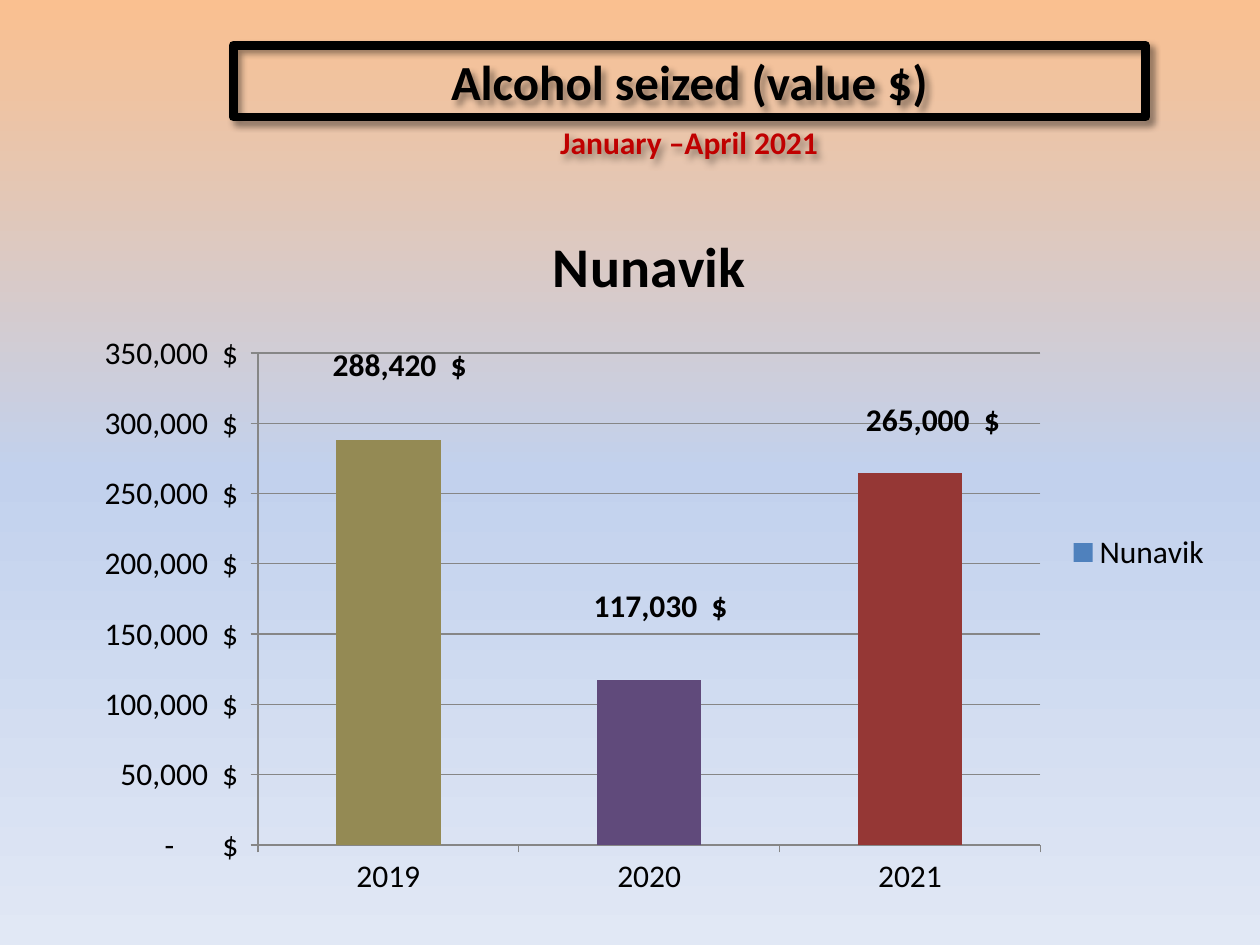
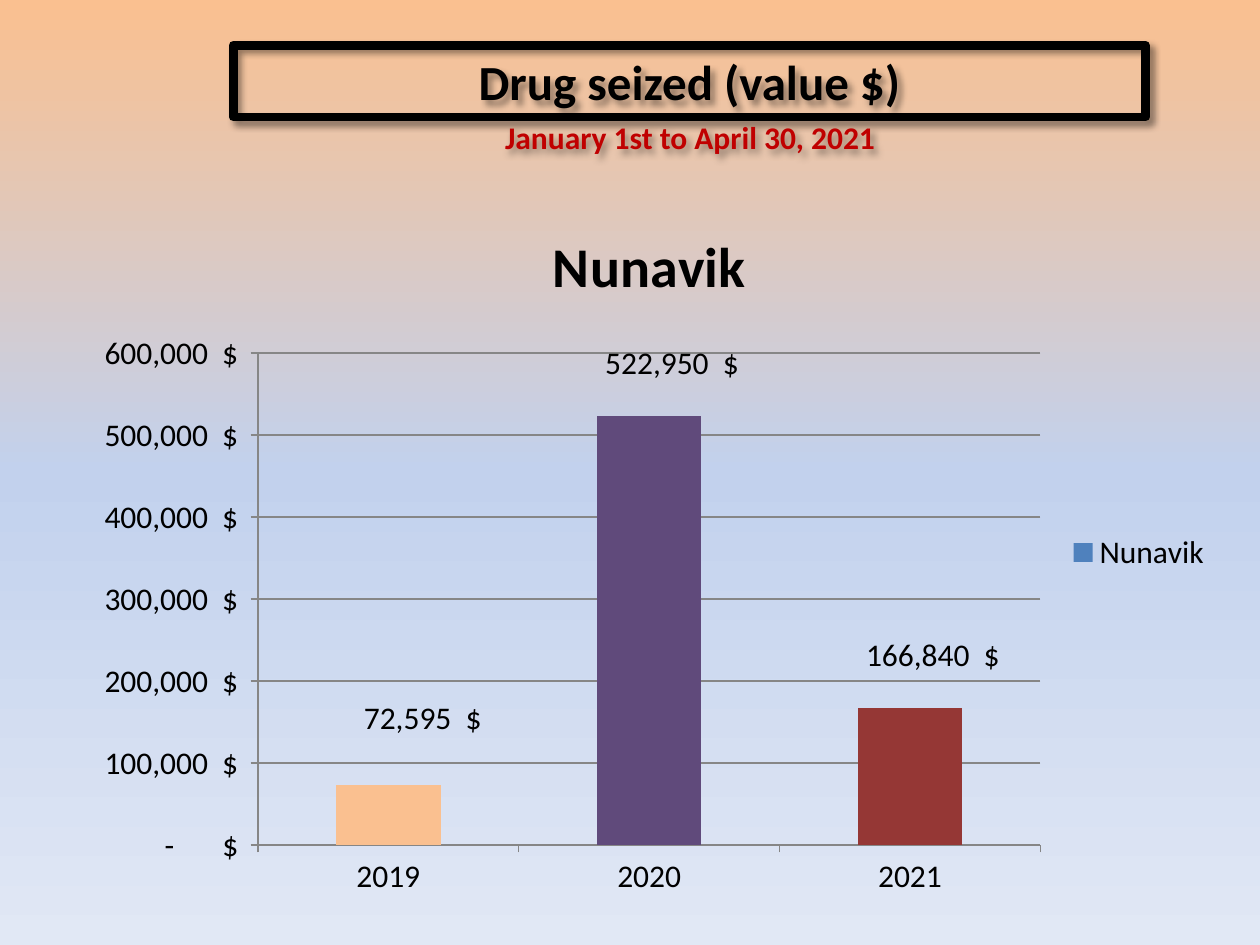
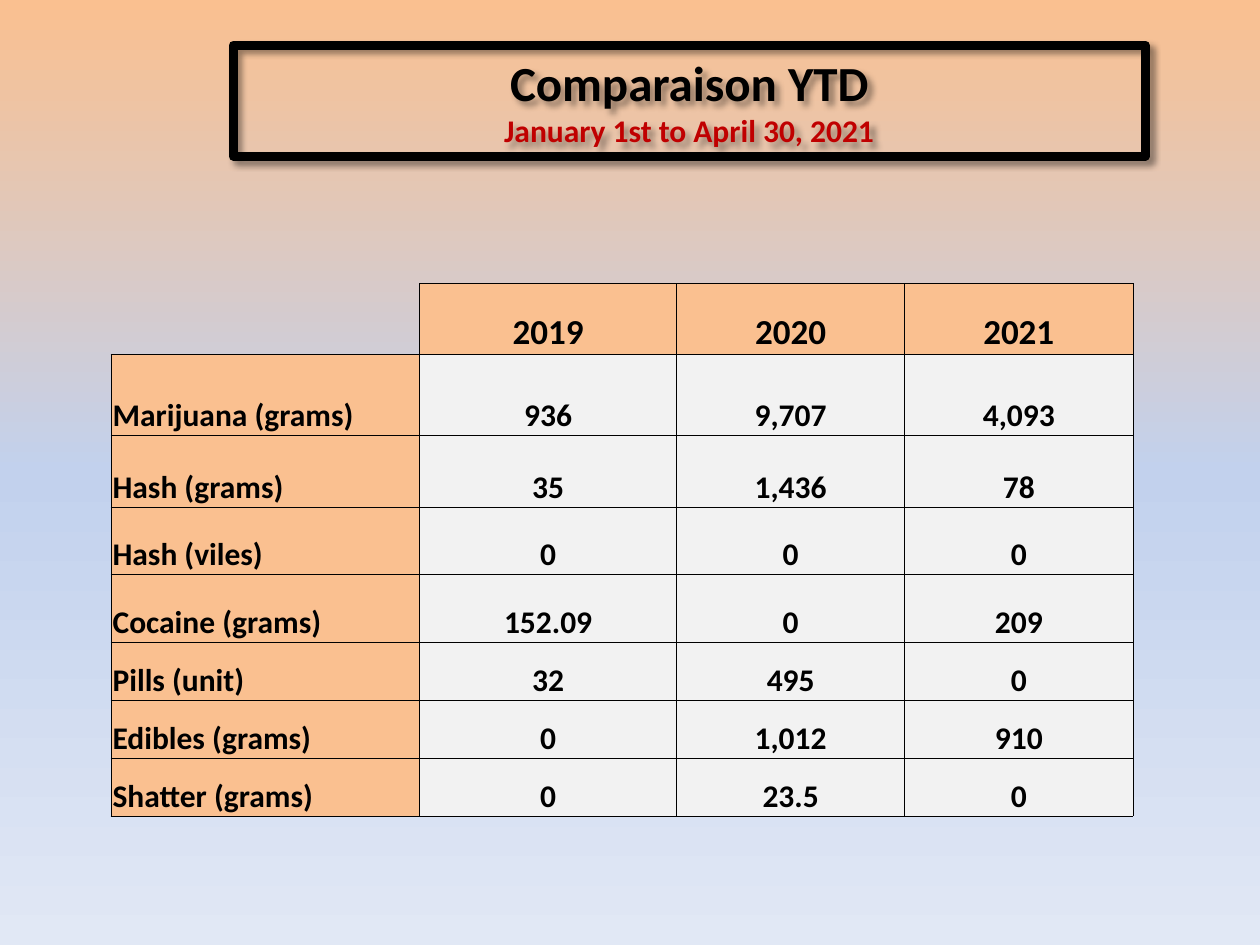
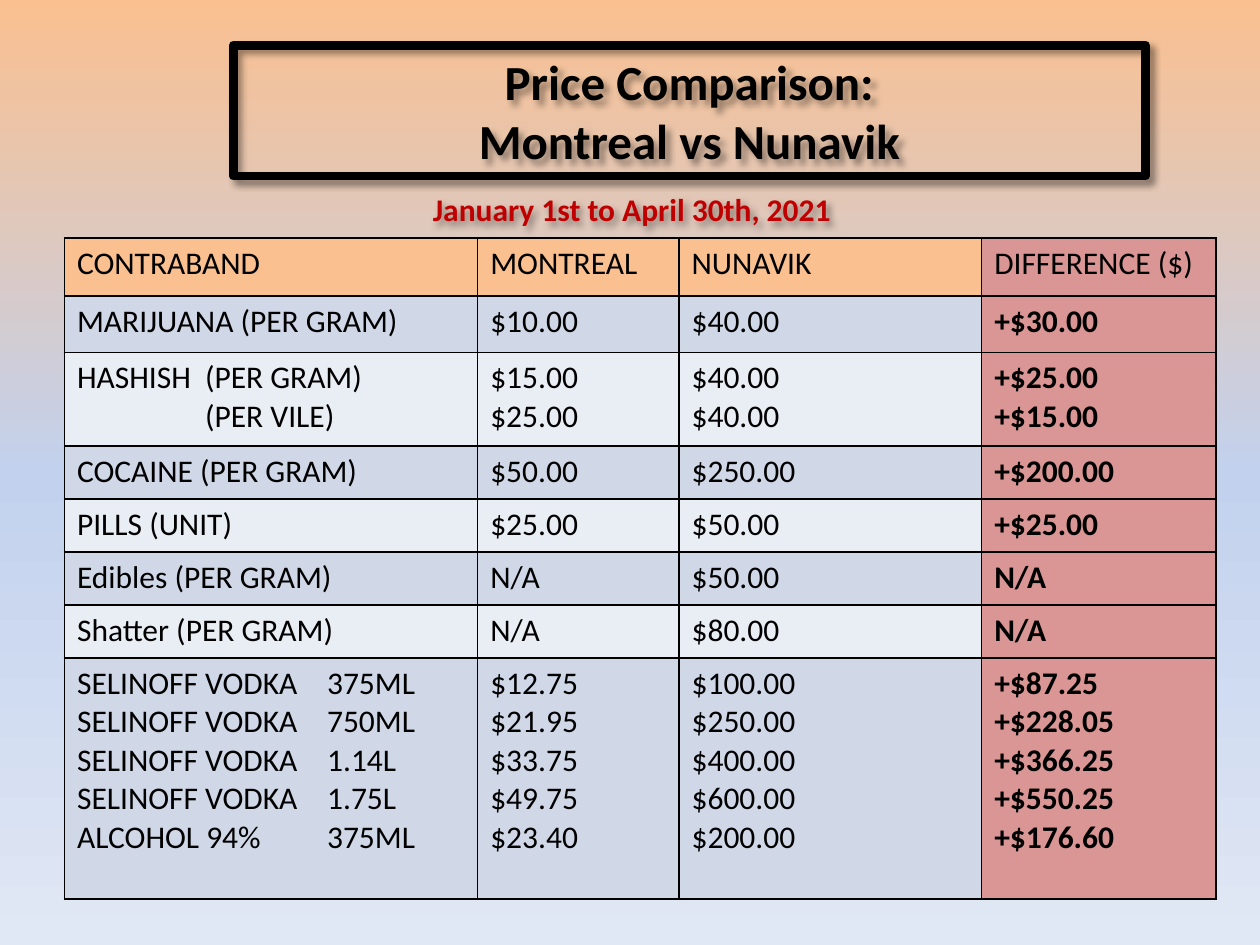
from dataclasses import dataclass

from lxml.etree import SubElement
from pptx import Presentation
from pptx.chart.data import CategoryChartData
from pptx.dml.color import RGBColor
from pptx.enum.chart import XL_CHART_TYPE as ChartType
from pptx.enum.chart import XL_LABEL_POSITION as LabelPosition
from pptx.enum.chart import XL_LEGEND_POSITION as LegendPosition
from pptx.enum.text import MSO_ANCHOR as Anchor
from pptx.enum.text import MSO_AUTO_SIZE as AutoSize
from pptx.enum.text import PP_ALIGN as Align
from pptx.oxml.ns import qn
from pptx.util import Cm, Pt


@dataclass(frozen=True)
class Theme:
    font: str = "Calibri"
    ink: str = "000000"
    period: str = "C00000"
    peach: str = "FAC090"
    rose: str = "D99694"
    pale: str = "F2F2F2"
    bands: tuple = ("E9EDF4", "D0D8E8")
    background: tuple = ((0, "FAC090"), (50, "C2D1ED"), (100, "E1E8F5"))
    series: str = "4F81BD"
    olive: str = "948A54"
    purple: str = "604A7B"
    brick: str = "953735"
    axis: str = "868686"
    title_size: int = 28
    body_size: int = 18
    year_size: int = 20
    chart_title_size: int = 32


THEME = Theme()
TITLE_BOX = (4.7, 0.91, 18.39)
PERIOD_HEIGHT = 1.02
CHART_BOX = (1.5, 3.94, 23.19, 14.4)
YEARS = ("2019", "2020", "2021")
DOLLARS = r'_ * #,##0_)\ "$"_ ;_ * \(#,##0\)\ "$"_ ;_ * "-"??_)\ "$"_ ;_ @_ '
TITLE_ONLY = 5

TOTALS = [
    ("", *YEARS),
    ("Marijuana (grams)", "936", "9,707", "4,093"),
    ("Hash (grams)", "35", "1,436", "78"),
    ("Hash (viles)", "0", "0", "0"),
    ("Cocaine (grams)", "152.09", "0", "209"),
    ("Pills (unit)", "32", "495", "0"),
    ("Edibles (grams)", "0", "1,012", "910"),
    ("Shatter (grams)", "0", "23.5", "0"),
]

PRICES = [
    ("CONTRABAND", "MONTREAL", "NUNAVIK", "DIFFERENCE ($)"),
    ("MARIJUANA (PER GRAM)", "$10.00", "$40.00", "+$30.00"),
    ("HASHISH\t(PER GRAM)\n\t(PER VILE)", "$15.00\n$25.00",
     "$40.00\n$40.00", "+$25.00\n+$15.00"),
    ("COCAINE (PER GRAM)", "$50.00", "$250.00", "+$200.00"),
    ("PILLS (UNIT)", "$25.00", "$50.00", "+$25.00"),
    ("Edibles (PER GRAM)", "N/A", "$50.00", "N/A"),
    ("Shatter (PER GRAM)", "N/A", "$80.00", "N/A"),
    ("SELINOFF VODKA\t375ML\nSELINOFF VODKA\t750ML\nSELINOFF VODKA\t1.14L\n"
     "SELINOFF VODKA\t1.75L\nALCOHOL 94%\t375ML",
     "$12.75\n$21.95\n$33.75\n$49.75\n$23.40",
     "$100.00\n$250.00\n$400.00\n$600.00\n$200.00",
     "+$87.25\n+$228.05\n+$366.25\n+$550.25\n+$176.60"),
]
PRICE_TABS = {2: 2.58, 7: 5.04}


def rgb(code):
    return RGBColor.from_string(code)


def set_values(target, values):
    for name, value in values.items():
        setattr(target, name, value)


def style_font(font, size, color=THEME.ink, bold=False):
    set_values(font, {"name": THEME.font, "size": Pt(size), "bold": bold})
    font.color.rgb = rgb(color)


def fill_solid(target, color):
    target.fill.solid()
    target.fill.fore_color.rgb = rgb(color)


def write_lines(text_frame, lines):
    """Write centred bold lines, given as (text, size, colour)."""
    set_values(text_frame, {"word_wrap": True, "auto_size": AutoSize.NONE})
    text_frame.text = "\n".join(text for text, _, _ in lines)
    for paragraph, (_, size, color) in zip(text_frame.paragraphs, lines):
        paragraph.alignment = Align.CENTER
        style_font(paragraph.runs[0].font, size, color, bold=True)


def add_soft_shadow(shape):
    shape.shadow.inherit = False
    effects = shape.element.spPr.find(qn("a:effectLst"))
    shadow = SubElement(effects, qn("a:outerShdw"), blurRad=str(Pt(4)), dist=str(Pt(3)),
                        dir=str(45 * 60000), algn="tl", rotWithShape="0")
    color = SubElement(shadow, qn("a:srgbClr"), val=THEME.ink)
    SubElement(color, qn("a:alpha"), val="40000")


def paint_background(master):
    fill = master.background.fill
    fill.gradient()
    fill.gradient_angle = 270
    stops = master.element.find(".//" + qn("a:gsLst"))
    for stop in list(stops):
        stops.remove(stop)
    for percent, color in THEME.background:
        stop = SubElement(stops, qn("a:gs"), pos=str(percent * 1000))
        SubElement(stop, qn("a:srgbClr"), val=color)


def add_titled_slide(presentation, height, lines):
    slide = presentation.slides.add_slide(presentation.slide_layouts[TITLE_ONLY])
    title = slide.shapes.title
    left, top, width = TITLE_BOX
    set_values(title, {"left": Cm(left), "top": Cm(top),
                       "width": Cm(width), "height": Cm(height)})
    title.line.color.rgb = rgb(THEME.ink)
    title.line.width = Pt(5)
    add_soft_shadow(title)
    write_lines(title.text_frame, lines)
    return slide


def heading(text):
    return text, THEME.title_size, THEME.ink


def period_line(text):
    return text, THEME.body_size, THEME.period


def add_period(slide, text, top, left=TITLE_BOX[0], margin_right=0.25):
    shape = slide.shapes.add_textbox(Cm(left), Cm(top), Cm(TITLE_BOX[2]), Cm(PERIOD_HEIGHT))
    write_lines(shape.text_frame, [period_line(text)])
    shape.text_frame.margin_right = Cm(margin_right)
    add_soft_shadow(shape)


def add_seizure_chart(slide, box, values, colors, scale, shifts, bold_labels):
    data = CategoryChartData(number_format=DOLLARS)
    data.categories = YEARS
    data.add_series("Nunavik", values)
    chart = slide.shapes.add_chart(ChartType.COLUMN_CLUSTERED, *map(Cm, box), data).chart
    style_font(chart.font, THEME.body_size)

    set_values(chart, {"has_title": True, "has_legend": True})
    chart.chart_title.include_in_layout = False
    chart.chart_title.text_frame.text = "Nunavik"
    title_run = chart.chart_title.text_frame.paragraphs[0].runs[0]
    style_font(title_run.font, THEME.chart_title_size, bold=True)
    set_values(chart.legend, {"position": LegendPosition.RIGHT, "include_in_layout": False})

    maximum, step = scale
    value_axis = chart.value_axis
    set_values(value_axis, {"minimum_scale": 0, "maximum_scale": maximum,
                            "major_unit": step, "has_major_gridlines": True})
    set_values(value_axis.tick_labels,
               {"number_format": DOLLARS, "number_format_is_linked": False})
    for lines in (value_axis, value_axis.major_gridlines, chart.category_axis):
        lines.format.line.color.rgb = rgb(THEME.axis)

    plot = chart.plots[0]
    set_values(plot, {"gap_width": 150, "vary_by_categories": False})
    series = plot.series[0]
    fill_solid(series.format, THEME.series)
    for index, color in enumerate(colors):
        point = series.points[index]
        fill_solid(point.format, color)
        label = point.data_label
        style_font(label.font, THEME.body_size, bold=bold_labels)
        label.position = LabelPosition.OUTSIDE_END
    move_labels(series, shifts)


def move_labels(series, shifts):
    """Shift each label by (x, y) fractions of the chart, without leader lines."""
    labels = series.data_labels._element
    for leader in labels.iter(qn("c:showLeaderLines")):
        leader.set("val", "0")
    for label, shift in zip(labels.iter(qn("c:dLbl")), shifts):
        layout = label.makeelement(qn("c:layout"), {})
        manual = SubElement(layout, qn("c:manualLayout"))
        for axis, offset in zip("xy", shift):
            SubElement(manual, qn("c:" + axis), val=str(offset))
        label.insert(1, layout)


def add_borders(cell, width, sides="LRTB"):
    """Draw the named sides of a cell and hide the others."""
    properties = cell._tc.get_or_add_tcPr()
    for index, side in enumerate("LRTB"):
        line = properties.makeelement(qn("a:ln" + side), {"w": str(Pt(width))})
        if side in sides:
            fill = SubElement(line, qn("a:solidFill"))
            SubElement(fill, qn("a:srgbClr"), val=THEME.ink)
        else:
            SubElement(line, qn("a:noFill"))
        properties.insert(index, line)


def add_grid(slide, corner, widths, heights, rows):
    """Add a plain table and yield each cell with its row and column."""
    box = (*corner, sum(widths), sum(heights))
    table = slide.shapes.add_table(len(rows), len(widths), *map(Cm, box)).table
    set_values(table, {"first_row": False, "horz_banding": False})
    for column, width in zip(table.columns, widths):
        column.width = Cm(width)
    for row, height in zip(table.rows, heights):
        row.height = Cm(height)
    for row, texts in enumerate(rows):
        for column, text in enumerate(texts):
            cell = table.cell(row, column)
            cell.text = text
            yield cell, row, column


def style_cell(cell, size, bold, align):
    for paragraph in cell.text_frame.paragraphs:
        paragraph.alignment = align
        for run in paragraph.runs:
            style_font(run.font, size, bold=bold)


def add_totals_table(slide, corner):
    widths = (6.22, 5.18, 4.6, 4.6)
    heights = (1.42, 1.63, 1.45, 1.35, 1.37, 1.17, 1.17, 1.17)
    insets = {"margin_left": Cm(0.03), "margin_right": Cm(0.03), "margin_top": Cm(0.03),
              "margin_bottom": 0, "vertical_anchor": Anchor.BOTTOM}
    for cell, row, column in add_grid(slide, corner, widths, heights, TOTALS):
        set_values(cell, insets)
        style_cell(cell, THEME.body_size if row else THEME.year_size, True,
                   Align.CENTER if column else Align.LEFT)
        if row or column:
            fill_solid(cell, THEME.pale if row and column else THEME.peach)
            add_borders(cell, 0.5)
        else:
            cell.fill.background()
            add_borders(cell, 0.5, "RB")


def add_tab_stop(paragraph, position):
    properties = paragraph._p.get_or_add_pPr()
    stops = SubElement(properties, qn("a:tabLst"))
    SubElement(stops, qn("a:tab"), pos=str(Cm(position)), algn="l")


def add_price_table(slide, corner):
    widths = (8.33, 4.06, 6.1, 4.72)
    heights = (1.17, 1.14, 1.88, 1.07, 1.07, 1.07, 1.07, 4.85)
    difference = len(widths) - 1
    for cell, row, column in add_grid(slide, corner, widths, heights, PRICES):
        style_cell(cell, THEME.body_size, row > 0 and column == difference, Align.LEFT)
        if column == difference:
            color = THEME.rose
        else:
            color = THEME.bands[row % 2] if row else THEME.peach
        fill_solid(cell, color)
        add_borders(cell, 1)
        if column == 0 and row in PRICE_TABS:
            for paragraph in cell.text_frame.paragraphs:
                add_tab_stop(paragraph, PRICE_TABS[row])


def main():
    presentation = Presentation()
    set_values(presentation, {"slide_width": Cm(25.4), "slide_height": Cm(19.05)})
    paint_background(presentation.slide_master)

    alcohol = add_titled_slide(presentation, 1.45, [heading("Alcohol seized (value $)")])
    add_period(alcohol, "January –April 2021", 2.36)
    add_seizure_chart(alcohol, CHART_BOX, (288420, 117030, 265000),
                      (THEME.olive, THEME.purple, THEME.brick), (350000, 50000),
                      ((0.01, -0.07), (0.01, -0.07), (0.02, -0.04)), bold_labels=True)

    drugs = add_titled_slide(presentation, 1.45, [heading("Drug seized (value $)")])
    add_period(drugs, "January 1st to April 30, 2021", 2.26, left=4.72)
    add_seizure_chart(drugs, CHART_BOX, (72595, 522950, 166840),
                      (THEME.peach, THEME.purple, THEME.brick), (600000, 100000),
                      ((0.03, -0.06), (0.02, -0.04), (0.02, -0.04)), bold_labels=False)

    totals = add_titled_slide(presentation, 2.24, [
        heading("Comparaison YTD"), period_line("January 1st to April 30, 2021")])
    add_totals_table(totals, (2.24, 5.72))

    prices = add_titled_slide(presentation, 2.64, [
        heading("Price Comparison:"), heading("Montreal vs Nunavik")])
    add_period(prices, "January 1st to April 30th, 2021", 3.71, margin_right=2.56)
    add_price_table(prices, (1.3, 4.8))

    presentation.save("out.pptx")


if __name__ == "__main__":
    main()
